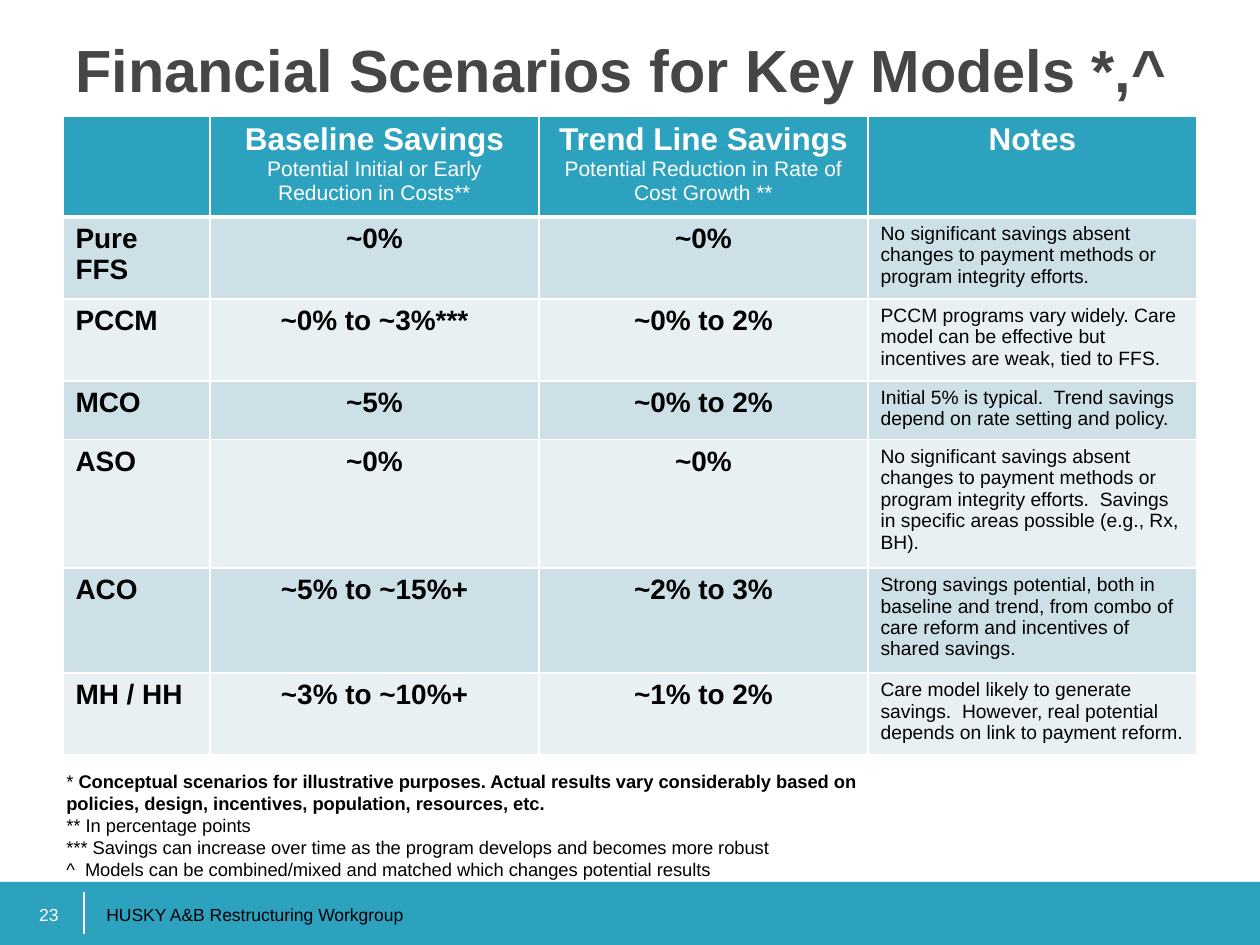
from lxml import etree
from pptx import Presentation
from pptx import util as u
from pptx.dml.color import RGBColor
from pptx.enum import shapes, text
from pptx.oxml.ns import qn

COLORS = {"teal": "2DA2BF", "white": "FFFFFF", "black": "000000",
          "title": "464646", "odd": "CDE0E8", "even": "E8F0F4"}
FONT = "Arial"
LEFT, CENTER, RIGHT = text.PP_ALIGN.LEFT, text.PP_ALIGN.CENTER, text.PP_ALIGN.RIGHT
TOP, BOTTOM = text.MSO_ANCHOR.TOP, text.MSO_ANCHOR.BOTTOM

COLUMN_WIDTHS = [147, 329, 329, 329]
ROW_HEIGHTS = [94, 78, 76, 56, 120, 98, 76]
HEADINGS = [
    ("", ""),
    ("Baseline Savings", "Potential Initial or Early Reduction in Costs**"),
    ("Trend Line Savings", "Potential Reduction in Rate of Cost Growth **"),
    ("Notes", ""),
]
MODELS = [
    ("Pure FFS", "~0%", "~0%",
     "No significant savings absent changes to payment methods or program integrity efforts."),
    ("PCCM", "~0% to ~3%***", "~0% to 2%",
     "PCCM programs vary widely. Care model can be effective but incentives are weak, tied to FFS."),
    ("MCO", "~5%", "~0% to 2%",
     "Initial 5% is typical.  Trend savings depend on rate setting and policy."),
    ("ASO", "~0%", "~0%",
     "No significant savings absent changes to payment methods or program integrity efforts.  "
     "Savings in specific areas possible (e.g., Rx, BH)."),
    ("ACO", "~5% to ~15%+", "~2% to 3%",
     "Strong savings potential, both in baseline and trend, from combo of care reform "
     "and incentives of shared savings."),
    ("MH / HH", "~3% to ~10%+", "~1% to 2%",
     "Care model likely to generate savings.  However, real potential depends on link "
     "to payment reform."),
]
FOOTNOTES = [
    [("* ", False),
     ("Conceptual scenarios for illustrative purposes. Actual results vary considerably "
      "based on policies, design, incentives, population, resources, etc.", True)],
    [("** In percentage points", False)],
    [("*** Savings can increase over time as the program develops and becomes more robust", False)],
    [("^  Models can be combined/mixed and matched which changes potential results", False)],
]


def px(length):
    """Turn slide pixels into EMU."""
    return u.Emu(round(length * 914400 / 126))


def rgb(name):
    """Look up a palette colour."""
    return RGBColor.from_string(COLORS[name])


def write(frame, paragraphs, align=LEFT):
    """Fill a text frame with paragraphs of (words, size, color, bold) runs."""
    frame.word_wrap = True
    for index, runs in enumerate(paragraphs):
        paragraph = frame.add_paragraph() if index else frame.paragraphs[0]
        paragraph.alignment = align
        for words, size, color, bold in runs:
            run = paragraph.add_run()
            run.text = words
            run.font.name = FONT
            run.font.size = u.Pt(size)
            run.font.bold = bold
            run.font.color.rgb = rgb(color)


def add_label(slide, box, paragraphs, align=LEFT, anchor=TOP):
    """Place a wrapped text box and return its frame."""
    frame = slide.shapes.add_textbox(*map(px, box)).text_frame
    frame.vertical_anchor = anchor
    write(frame, paragraphs, align)
    return frame


def add_title(slide, box):
    """Place the slide title."""
    heading = [[("Financial Scenarios for Key Models *,^", 34, "title", True)]]
    add_label(slide, box, heading).margin_top = px(12)


def style_cell(cell, fill, top=1, bottom=1):
    """Fill a cell and rule its four sides in white."""
    cell.fill.solid()
    cell.fill.fore_color.rgb = rgb(fill)
    properties = cell._tc.get_or_add_tcPr()
    sides = [("a:lnL", 1), ("a:lnR", 1), ("a:lnT", top), ("a:lnB", bottom)]
    for position, (side, points) in enumerate(sides):
        line = etree.Element(qn(side), w=str(u.Pt(points)))
        solid = etree.SubElement(line, qn("a:solidFill"))
        etree.SubElement(solid, qn("a:srgbClr"), val=COLORS["white"])
        properties.insert(position, line)


def add_scenarios(slide, box):
    """Build the table of savings by model."""
    table = slide.shapes.add_table(len(MODELS) + 1, len(HEADINGS), *map(px, box)).table
    for column, width in zip(table.columns, COLUMN_WIDTHS):
        column.width = px(width)
    for row, height in zip(table.rows, ROW_HEIGHTS):
        row.height = px(height)
    for column, (heading, detail) in enumerate(HEADINGS):
        cell = table.cell(0, column)
        style_cell(cell, "teal", bottom=3)
        lines = [(heading, 18, "white", True), (detail, 12, "white", False)]
        write(cell.text_frame, [[line] for line in lines if line[0]], CENTER)
    for row, model in enumerate(MODELS, 1):
        for column, words in enumerate(model):
            cell = table.cell(row, column)
            style_cell(cell, "odd" if row % 2 else "even", top=3 if row == 1 else 1)
            is_note = column == len(model) - 1
            run = (words, 11 if is_note else 16, "black", not is_note)
            write(cell.text_frame, [[run]], CENTER if column in (1, 2) else LEFT)


def add_footnotes(slide, box):
    """Place the footnotes under the table."""
    add_label(slide, box, [[(words, 10.5, "black", bold) for words, bold in note]
                           for note in FOOTNOTES])


def add_footer(slide, box):
    """Draw the footer band with page number, divider and group name."""
    left, top, width, height = box
    band = slide.shapes.add_shape(shapes.MSO_SHAPE.RECTANGLE, *map(px, box))
    band.shadow.inherit = False
    band.fill.solid()
    band.fill.fore_color.rgb = rgb("teal")
    band.line.fill.background()
    divider = slide.shapes.add_connector(
        shapes.MSO_CONNECTOR.STRAIGHT,
        *map(px, (left + 84, top + 10, left + 84, top + height - 11)))
    divider.line.color.rgb = rgb("white")
    divider.line.width = u.Pt(1)
    etree.SubElement(divider._element.spPr, qn("a:effectLst"))
    add_label(slide, (left + 21, top - 1, 50, 50),
              [[("23", 10, "white", False)]], RIGHT, BOTTOM)
    add_label(slide, (left + 94, top - 1, 567, 50),
              [[("HUSKY A&B Restructuring Workgroup", 10, "black", False)]], LEFT, BOTTOM)


def main():
    """Build and save the slide."""
    deck = Presentation()
    deck.slide_width, deck.slide_height = px(1260), px(945)
    slide = deck.slides.add_slide(deck.slide_layouts[6])
    add_footer(slide, (0, 882, 1260, 63))
    add_scenarios(slide, (63, 116, sum(COLUMN_WIDTHS), sum(ROW_HEIGHTS)))
    add_title(slide, (63, 21, 1134, 105))
    add_footnotes(slide, (54, 764, 829, 123))
    deck.save("out.pptx")


if __name__ == "__main__":
    main()
